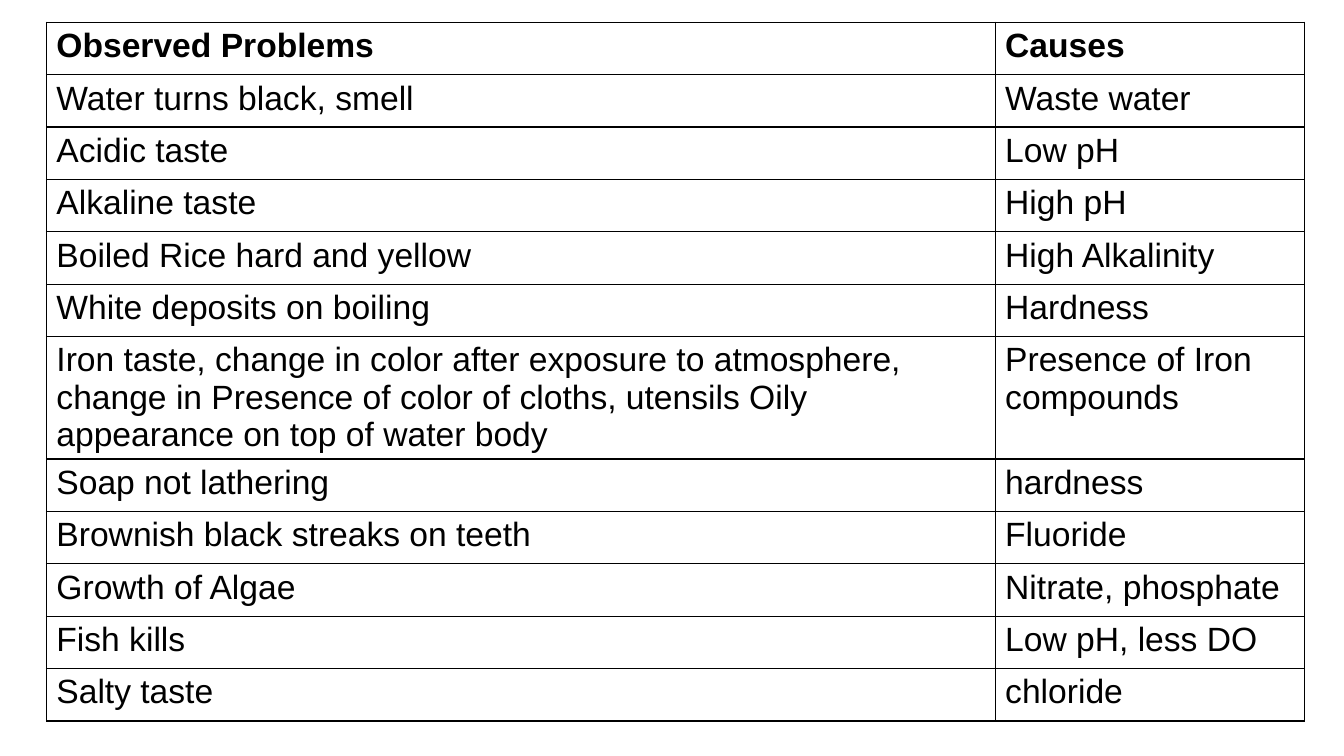
from lxml import etree
from pptx import Presentation
from pptx import util as u
from pptx.dml.color import RGBColor
from pptx.oxml import ns

PROBLEMS = [
    ("Observed Problems", "Causes"),
    ("Water turns black, smell", "Waste water"),
    ("Acidic taste", "Low pH"),
    ("Alkaline taste", "High pH"),
    ("Boiled Rice hard and yellow", "High Alkalinity"),
    ("White deposits on boiling", "Hardness"),
    ("Iron taste, change in color after exposure to atmosphere, change in "
     "Presence of color of cloths, utensils Oily appearance on top of water body",
     "Presence of Iron compounds"),
    ("Soap not lathering", "hardness"),
    ("Brownish black streaks on teeth", "Fluoride"),
    ("Growth of Algae", "Nitrate, phosphate"),
    ("Fish kills", "Low pH, less DO"),
    ("Salty taste", "chloride"),
]
BLACK = "000000"
COLUMN_WIDTHS = (9.41, 3.07)
ROW_HEIGHT = 0.52


def add_borders(cell, color, width=u.Pt(1)):
    """Rule all four sides of a cell; the lines must precede its fill."""
    properties = cell._tc.get_or_add_tcPr()
    for position, side in enumerate(("lnL", "lnR", "lnT", "lnB")):
        line = etree.Element(ns.qn(f"a:{side}"), w=str(int(width)))
        solid = etree.SubElement(line, ns.qn("a:solidFill"))
        etree.SubElement(solid, ns.qn("a:srgbClr"), val=color)
        properties.insert(position, line)


prs = Presentation()
prs.slide_width, prs.slide_height = u.Inches(13.33), u.Inches(7.5)
slide = prs.slides.add_slide(prs.slide_layouts[6])

# Table grid; the row with the long text grows to fit
water_table = slide.shapes.add_table(
    len(PROBLEMS), len(COLUMN_WIDTHS), u.Inches(0.46), u.Inches(0.22),
    u.Inches(sum(COLUMN_WIDTHS)), u.Inches(ROW_HEIGHT * len(PROBLEMS))).table
water_table.horz_banding = False
for column, width in zip(water_table.columns, COLUMN_WIDTHS):
    column.width = u.Inches(width)

# Problems and their causes
for row, entries in enumerate(PROBLEMS):
    water_table.rows[row].height = u.Inches(ROW_HEIGHT)
    for col, entry in enumerate(entries):
        cell = water_table.cell(row, col)
        cell.text = entry
        cell.fill.background()
        add_borders(cell, BLACK)
        font = cell.text_frame.paragraphs[0].font
        font.name, font.size, font.bold = "Arial", u.Pt(24), row == 0
        font.color.rgb = RGBColor.from_string(BLACK)

prs.save("out.pptx")
